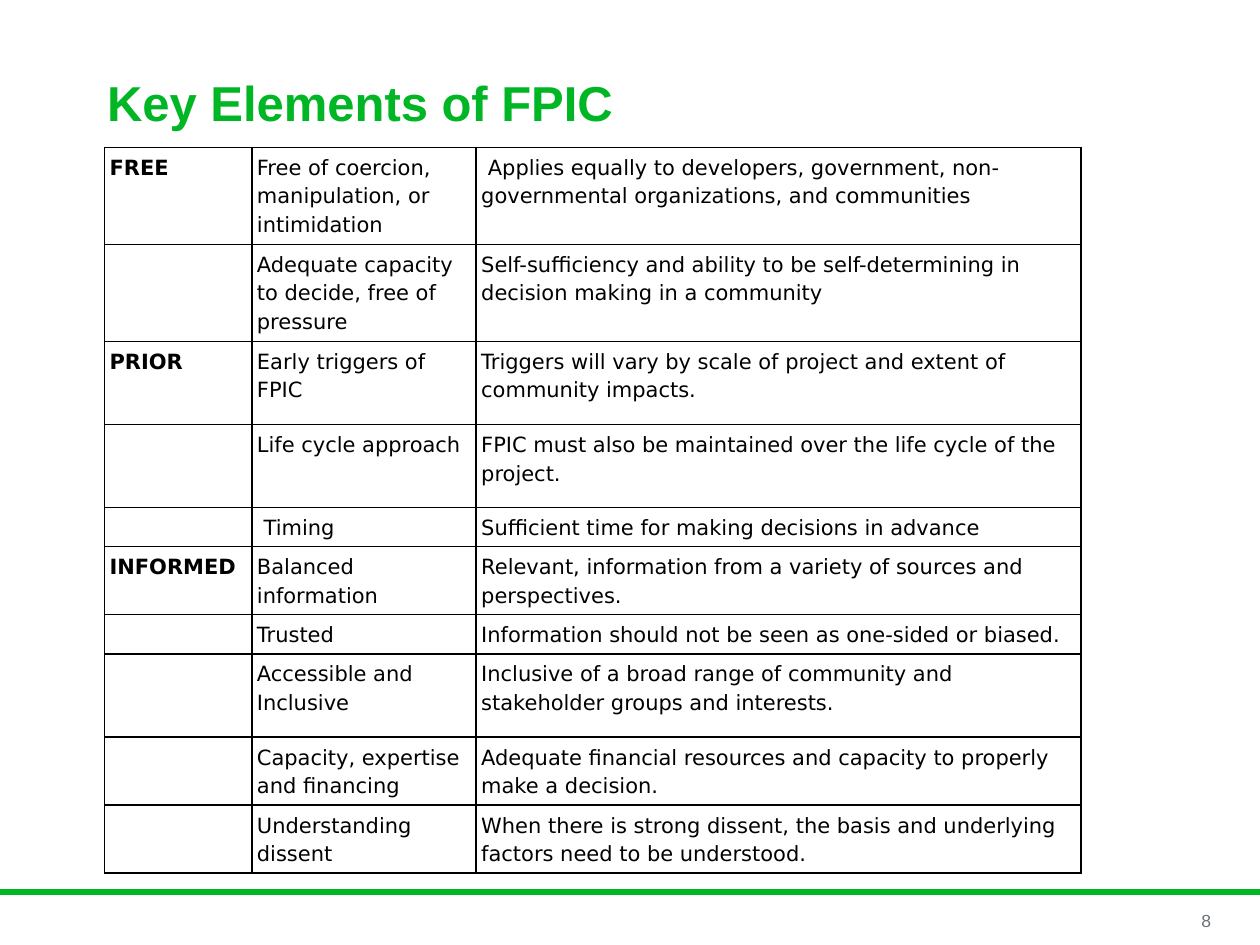
from lxml import etree
from pptx import Presentation, util as u
from pptx.dml.color import RGBColor
from pptx.enum import shapes, text
from pptx.oxml.ns import qn

GREEN, GREY, BLACK, WHITE = "00B624", "6A737B", "000000", "FFFFFF"
WIDTH, HEIGHT = 10, 7.5
COLUMNS = [1.17, 1.78, 4.8]
# Row height, element, criterion, explanation
ELEMENTS = [
    (0.48, "FREE", "Free of coercion, manipulation, or intimidation",
     "\u00a0Applies equally to developers, government, non-governmental organizations, and communities"),
    (0.48, "", "Adequate capacity to decide, free of pressure",
     "Self-sufficiency and ability to be self-determining in decision making in a community"),
    (0.66, "PRIOR", "Early triggers of FPIC",
     "Triggers will vary by scale of project and extent of community impacts."),
    (0.66, "", "Life cycle approach",
     "FPIC must also be maintained over the life cycle of the project."),
    (0.31, "", "\u00a0Timing", "Sufficient time for making decisions in advance"),
    (0.31, "INFORMED", "Balanced information",
     "Relevant, information from a variety of sources and perspectives."),
    (0.31, "", "Trusted", "Information should not be seen as one-sided or biased."),
    (0.66, "", "Accessible and Inclusive",
     "Inclusive of a broad range of community and stakeholder groups and interests."),
    (0.48, "", "Capacity, expertise and financing",
     "Adequate financial resources and capacity to properly make a decision."),
    (0.48, "", "Understanding dissent",
     "When there is strong dissent, the basis and underlying factors need to be understood."),
]


def colour(value):
    return RGBColor.from_string(value)


def write(frame, words, font="Arial", size=12, hue=BLACK, bold=False,
          align=text.PP_ALIGN.LEFT, spacing=1.0):
    """Put one formatted paragraph into a text frame."""
    para = frame.paragraphs[0]
    para.alignment, para.line_spacing = align, spacing
    if not words:  # keeps an empty cell at the table's text size
        etree.SubElement(para._p, qn("a:endParaRPr"), sz=str(size * 100))
        return
    span = para.add_run()
    span.text = words
    span.font.name, span.font.size, span.font.bold = font, u.Pt(size), bold
    span.font.color.rgb = colour(hue)


def add_title(page, box, words):
    title = page.shapes.title
    title.left, title.top, title.width, title.height = map(u.Inches, box)
    title.text_frame.vertical_anchor = text.MSO_ANCHOR.MIDDLE
    title.text_frame.auto_size = text.MSO_AUTO_SIZE.NONE
    write(title.text_frame, words, size=28, hue=GREEN, bold=True, spacing=0.85)


def add_borders(cell, points=1):
    props = cell._tc.get_or_add_tcPr()
    for side in "LRTB":
        line = etree.SubElement(props, qn(f"a:ln{side}"), w=str(u.Pt(points)))
        fill = etree.SubElement(line, qn("a:solidFill"))
        etree.SubElement(fill, qn("a:srgbClr"), val=BLACK)


def add_elements_table(page, box):
    shape = page.shapes.add_table(len(ELEMENTS), len(COLUMNS), *map(u.Inches, box))
    table = shape.table
    table.first_row = table.horz_banding = False
    for column, width in zip(table.columns, COLUMNS):
        column.width = u.Inches(width)
    for index, (height, *words) in enumerate(ELEMENTS):
        table.rows[index].height = u.Inches(height)
        for place, entry in enumerate(words):
            cell = table.cell(index, place)
            cell.margin_left = cell.margin_right = u.Inches(0.04)
            cell.margin_top = cell.margin_bottom = u.Inches(0.04)
            add_borders(cell)
            if index == 0:
                cell.fill.solid()
                cell.fill.fore_color.rgb = colour(WHITE)
            else:
                cell.fill.background()
            write(cell.text_frame, entry, font="DejaVu Sans",
                  bold=place == 0, spacing=1.15)


def add_footer(page, top, number):
    # Green rule across the page
    rule = page.shapes.add_connector(
        shapes.MSO_CONNECTOR.STRAIGHT, 0, u.Inches(top), u.Inches(WIDTH), u.Inches(top))
    rule.line.color.rgb, rule.line.width = colour(GREEN), u.Pt(3.5)
    etree.SubElement(rule._element.spPr, qn("a:effectLst"))
    # Page number
    box = page.shapes.add_textbox(*map(u.Inches, (0.9 * WIDTH, top + 0.11, 0.71, 0.23)))
    frame = box.text_frame
    frame.word_wrap = True
    frame.vertical_anchor = text.MSO_ANCHOR.MIDDLE
    write(frame, number, size=10, hue=GREY, align=text.PP_ALIGN.RIGHT)


def main():
    deck = Presentation()
    deck.slide_width, deck.slide_height = u.Inches(WIDTH), u.Inches(HEIGHT)
    page = deck.slides.add_slide(deck.slide_layouts[5])
    add_footer(page, 7.08, "8")
    add_title(page, (0.75, 0.42, 7.42, 0.85), "Key Elements of FPIC")
    add_elements_table(page, (0.83, 1.17, sum(COLUMNS), 5.8))
    deck.save("out.pptx")


if __name__ == "__main__":
    main()
